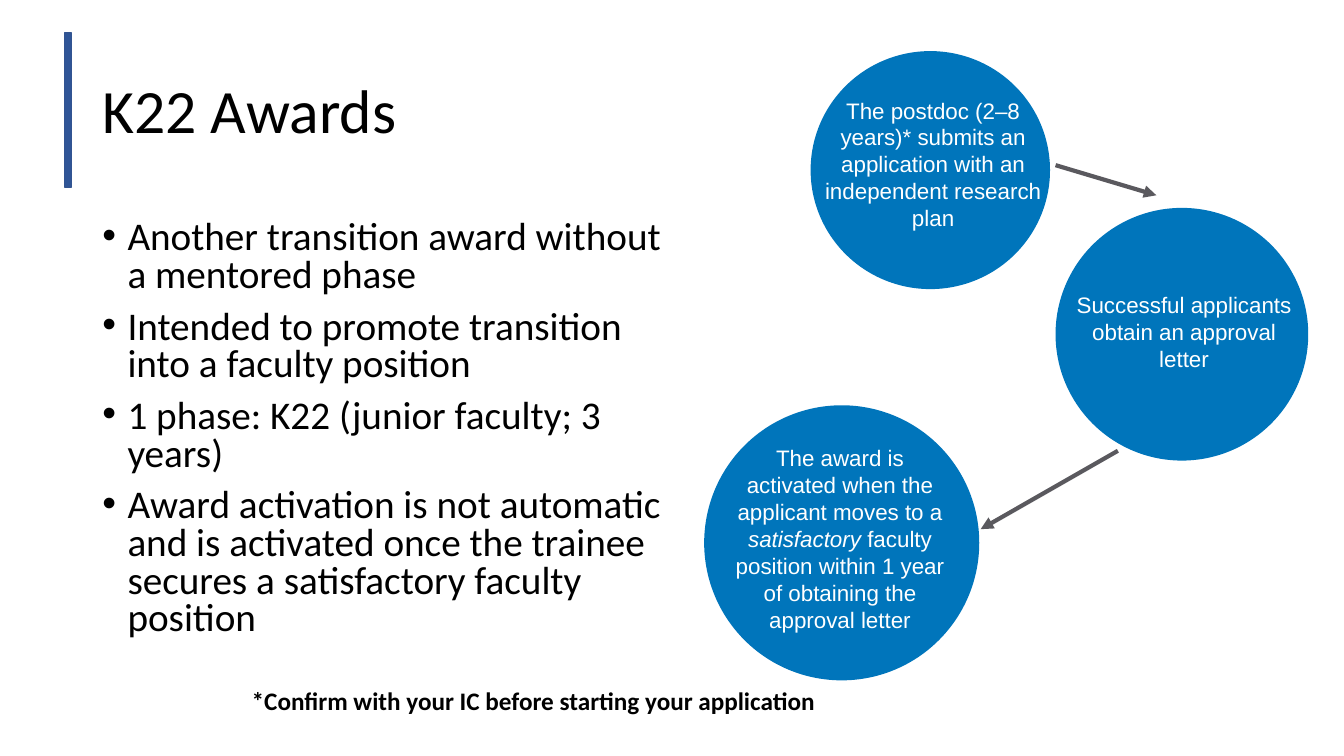
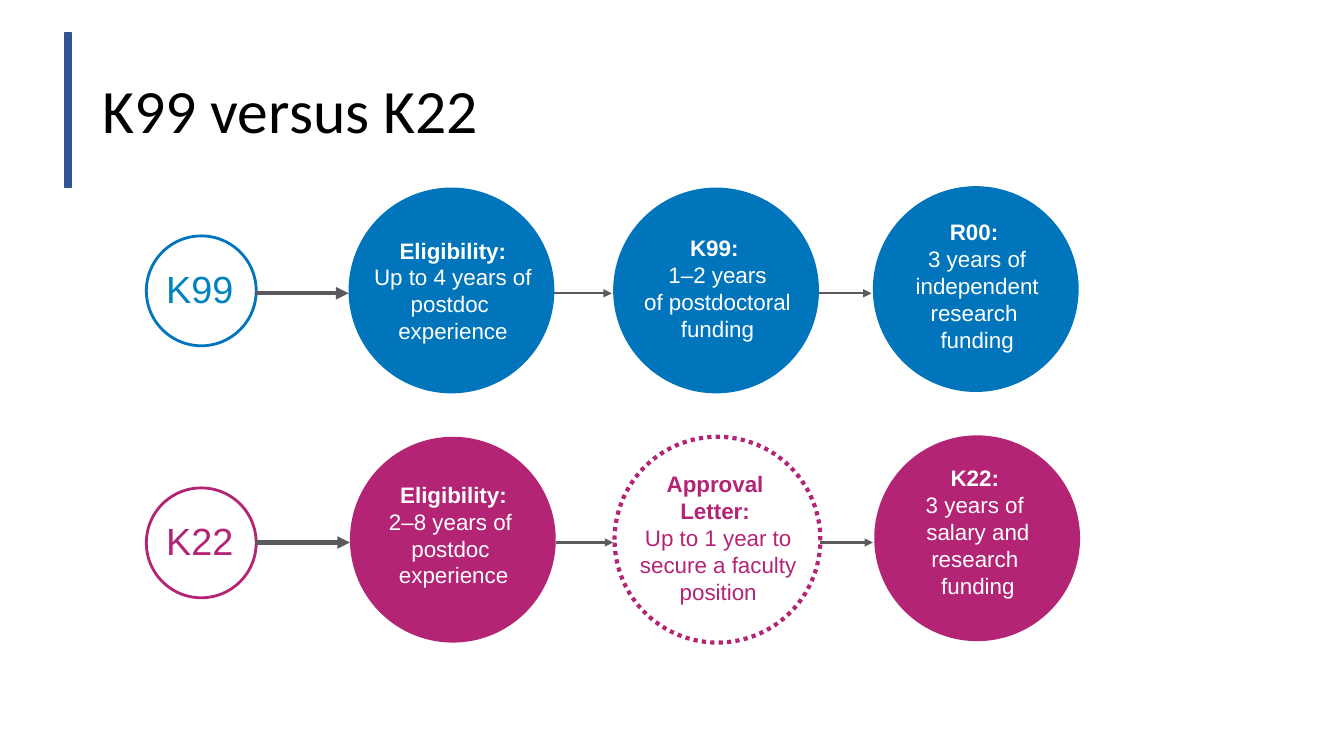
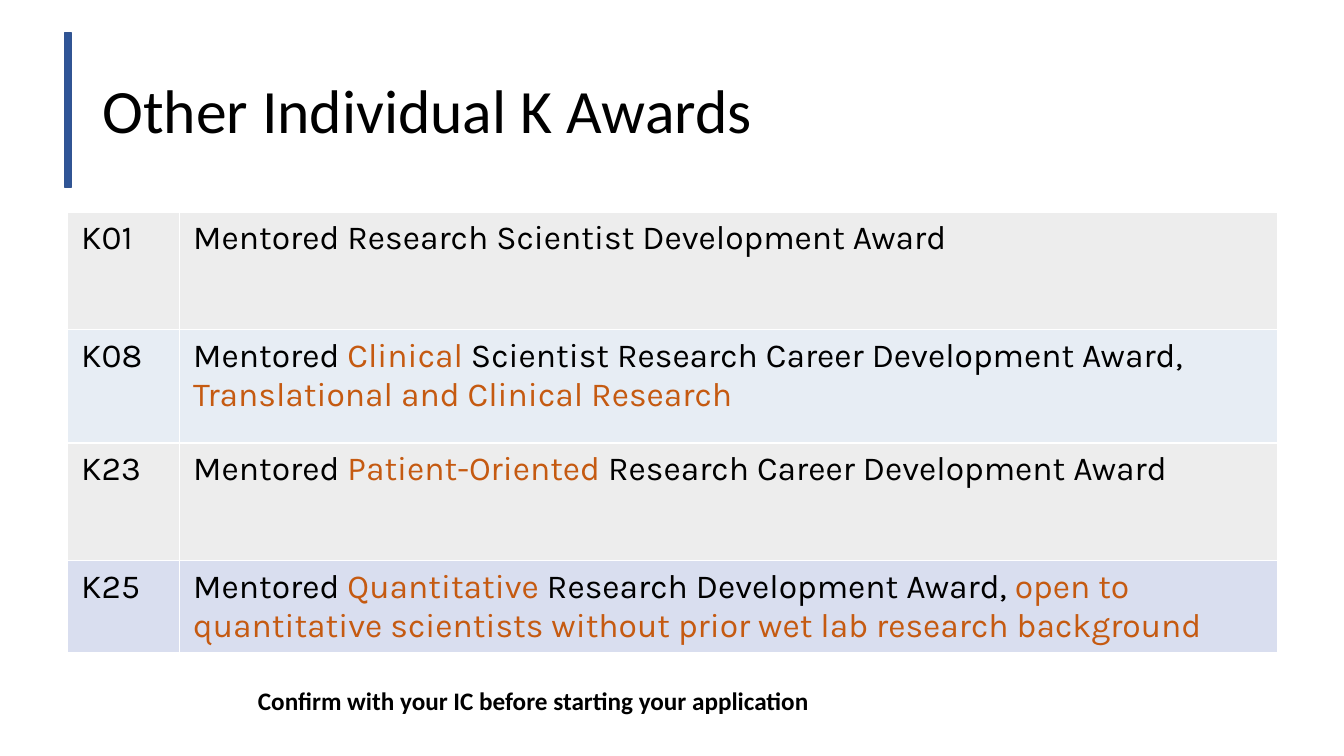
from dataclasses import dataclass
from itertools import pairwise

from lxml import etree
from pptx import Presentation
from pptx.dml.color import RGBColor
from pptx.enum.dml import MSO_LINE
from pptx.enum.shapes import MSO_CONNECTOR, MSO_SHAPE
from pptx.enum.text import MSO_ANCHOR, MSO_AUTO_SIZE, PP_ALIGN
from pptx.oxml.ns import qn
from pptx.util import Pt

LEFT, CENTER = PP_ALIGN.LEFT, PP_ALIGN.CENTER
TOP, MIDDLE = MSO_ANCHOR.TOP, MSO_ANCHOR.MIDDLE
OVAL, RECT = MSO_SHAPE.OVAL, MSO_SHAPE.RECTANGLE
STRAIGHT = MSO_CONNECTOR.STRAIGHT
DOTTED = MSO_LINE.ROUND_DOT
NO_FIT = MSO_AUTO_SIZE.NONE

BLACK = RGBColor(0x00, 0x00, 0x00)
WHITE = RGBColor(0xFF, 0xFF, 0xFF)
BAR_FILL = RGBColor(0x2F, 0x55, 0x97)
BAR_LINE = RGBColor(0x32, 0x54, 0x91)
BLUE = RGBColor(0x00, 0x75, 0xBB)
TAG_BLUE = RGBColor(0x00, 0x83, 0xC1)
MAGENTA = RGBColor(0xB3, 0x24, 0x75)
ARROW_GRAY = RGBColor(0x5A, 0x59, 0x5E)
ORANGE = RGBColor(0xC5, 0x5A, 0x11)
ROW_GRAY = RGBColor(0xED, 0xED, 0xED)
ROW_BLUE = RGBColor(0xE7, 0xED, 0xF4)
ROW_LILAC = RGBColor(0xD9, 0xDE, 0xEF)

TITLE = {"name": "Calibri", "size": Pt(44), "color": BLACK}
BODY = {"name": "Calibri", "size": Pt(28), "color": BLACK}
NOTE = {"name": "Calibri", "size": Pt(18), "color": BLACK, "bold": True}
LABEL = {"name": "Arial", "size": Pt(16), "color": WHITE}
TAG = {"name": "Arial", "size": Pt(27)}
CELL = {"name": "Karla", "size": Pt(24), "color": BLACK}

BOLD = {"bold": True}
ITALIC = {"italic": True}
ACCENT = {"color": ORANGE}


@dataclass(frozen=True)
class Run:
    text: str
    style: dict


@dataclass(frozen=True)
class Box:
    x: float
    y: float
    w: float
    h: float

    def emu(self) -> tuple:
        return Pt(self.x), Pt(self.y), Pt(self.w), Pt(self.h)


@dataclass(frozen=True)
class Bubble:
    circle: Box
    label: Box
    runs: tuple


@dataclass(frozen=True)
class Step:
    circle_y: float
    label_y: float
    heading: str
    detail: str
    dotted: bool = False


@dataclass(frozen=True)
class Track:
    tag: str
    tag_y: float
    arrow_y: float
    dx: float
    color: RGBColor
    tag_color: RGBColor
    steps: tuple


@dataclass(frozen=True)
class Award:
    code: str
    height: float
    fill: RGBColor
    runs: tuple


BULLETS = (
    "Another transition award without a mentored phase",
    "Intended to promote transition into a faculty position",
    "1 phase: K22 (junior faculty; 3 years)",
    "Award activation is not automatic and is activated once the trainee "
    "secures a satisfactory faculty position",
)

BUBBLES = (
    Bubble(Box(503, 289.5, 196.5, 196.5), Box(516, 314, 168, 143), (
        Run("The award is activated when the applicant moves to a ", {}),
        Run("satisfactory", ITALIC),
        Run(" faculty position within 1 year of obtaining the approval letter", {}),
    )),
    Bubble(Box(754, 148.5, 180.5, 180.5), Box(757.5, 204.5, 176.5, 85), (
        Run("Successful applicants obtain an approval letter", {}),
    )),
    Bubble(Box(579, 36.5, 171, 170), Box(580, 65.5, 173, 104), (
        Run("The postdoc (2–8 years)* submits an application with an "
            "independent research plan", {}),
    )),
)

TAG_X, TAG_SIZE = 104.5, 78.5
STEP_XS, STEP_SIZE = (249, 438, 623.5), 147
TRACKS = (
    Track("K99", 168.5, 209.5, 0, BLUE, TAG_BLUE, (
        Step(134, 165.5, "Eligibility:", "Up to 4 years of postdoc \nexperience"),
        Step(134, 164, "K99: ", "1–2 years\nof postdoctoral funding"),
        Step(133, 152.5, "R00: ", "3 years of independent research \nfunding"),
    )),
    Track("K22", 348.5, 387.5, 1, MAGENTA, MAGENTA, (
        Step(312, 340, "Eligibility:", "2–8 years of \npostdoc \nexperience"),
        Step(312, 332.5, "Approval \nLetter: ",
             "Up to 1 year to secure a faculty position", True),
        Step(311, 328, "K22: ", "3 years of \nsalary and research \nfunding"),
    )),
)

AWARDS = (
    Award("K01", 84, ROW_GRAY, (
        Run("Mentored Research Scientist Development Award", {}),
    )),
    Award("K08", 81, ROW_BLUE, (
        Run("Mentored ", {}),
        Run("Clinical", ACCENT),
        Run(" Scientist Research Career Development Award, ", {}),
        Run("Translational and Clinical Research", ACCENT),
    )),
    Award("K23", 84, ROW_GRAY, (
        Run("Mentored ", {}),
        Run("Patient-Oriented", ACCENT),
        Run(" Research Career Development Award", {}),
    )),
    Award("K25", 66, ROW_LILAC, (
        Run("Mentored ", {}),
        Run("Quantitative ", ACCENT),
        Run("Research Development Award,", {}),
        Run(" open to quantitative scientists without prior wet lab "
            "research background", ACCENT),
    )),
)


def write(p, runs: tuple, base: dict, align=LEFT) -> None:
    """Add styled runs to a paragraph; a newline becomes a line break."""
    p.alignment = align
    for run in runs:
        for i, line in enumerate(run.text.split("\n")):
            if i:
                p.add_line_break()
            r = p.add_run()
            r.text = line
            for name, value in {**base, **run.style}.items():
                if name == "color":
                    r.font.color.rgb = value
                else:
                    setattr(r.font, name, value)


def add_text(s, box: Box, paragraphs: tuple, base: dict, align=LEFT) -> list:
    tf = s.shapes.add_textbox(*box.emu()).text_frame
    for name, value in {"word_wrap": True, "auto_size": NO_FIT,
                        "vertical_anchor": TOP}.items():
        setattr(tf, name, value)
    for i, runs in enumerate(paragraphs):
        p = tf.add_paragraph() if i else tf.paragraphs[0]
        write(p, runs, base, align)
    return list(tf.paragraphs)


def add_figure(s, kind, box: Box, fill=None, line=None, width: float = 1, dash=None) -> None:
    sp = s.shapes.add_shape(kind, *box.emu())
    sp.shadow.inherit = False
    if fill is None:
        sp.fill.background()
    else:
        sp.fill.solid()
        sp.fill.fore_color.rgb = fill
    if line is None:
        sp.line.fill.background()
    else:
        sp.line.color.rgb = line
        sp.line.width = Pt(width)
        if dash is not None:
            sp.line.dash_style = dash


def add_arrow(s, x1: float, y1: float, x2: float, y2: float, width: float) -> None:
    c = s.shapes.add_connector(STRAIGHT, Pt(x1), Pt(y1), Pt(x2), Pt(y2))
    c.line.color.rgb = ARROW_GRAY
    c.line.width = Pt(width)
    etree.SubElement(c.line._get_or_add_ln(), qn("a:tailEnd"), type="triangle")
    etree.SubElement(c._element.spPr, qn("a:effectLst"))


def add_bullet(p, first: bool) -> None:
    pPr = p._p.get_or_add_pPr()
    pPr.set("marL", str(Pt(18)))
    pPr.set("indent", str(-Pt(18)))
    etree.SubElement(pPr, qn("a:buFont"), typeface="Arial")
    etree.SubElement(pPr, qn("a:buChar"), char="•")
    p.line_spacing = 0.8
    p.space_before = Pt(0 if first else 10)


def add_note(s, text: str) -> None:
    add_text(s, Box(102, 486, 558, 29), ((Run(text, {}),),), NOTE, CENTER)


def new_slide(prs, title: str):
    """Add a slide with the side bar and the formatted title."""
    s = prs.slides.add_slide(prs.slide_layouts[5])
    add_figure(s, RECT, Box(46, 23.5, 5, 110), BAR_FILL, BAR_LINE)
    sp = s.shapes.title
    sp.left, sp.top, sp.width, sp.height = Box(66, 29, 828, 104).emu()
    tf = sp.text_frame
    tf.auto_size = NO_FIT
    tf.vertical_anchor = MIDDLE
    p = tf.paragraphs[0]
    p.line_spacing = 0.9
    write(p, (Run(title, {}),), TITLE)
    return s


def build_k22(prs) -> None:
    s = new_slide(prs, "K22 Awards")
    bullets = tuple((Run(text, {}),) for text in BULLETS)
    for i, p in enumerate(add_text(s, Box(66, 154, 430, 311), bullets, BODY)):
        add_bullet(p, i == 0)
    for bubble in BUBBLES:
        add_figure(s, OVAL, bubble.circle, BLUE)
        add_text(s, bubble.label, (bubble.runs,), LABEL, CENTER)
    add_arrow(s, 754, 118, 826, 139.5, 3)
    add_arrow(s, 798.5, 322, 700.5, 378, 3)
    add_note(s, "*Confirm with your IC before starting your application")


def add_track(s, track: Track) -> None:
    """Draw one row: the tag, its three steps and the arrows between them."""
    add_figure(s, OVAL, Box(TAG_X, track.tag_y, TAG_SIZE, TAG_SIZE),
               line=track.color, width=2)
    add_text(s, Box(TAG_X - 1, track.tag_y + 18, TAG_SIZE, 40),
             ((Run(track.tag, {"color": track.tag_color}),),), TAG, CENTER)
    xs = [x + track.dx for x in STEP_XS]
    for x, step in zip(xs, track.steps):
        circle = Box(x, step.circle_y, STEP_SIZE, STEP_SIZE)
        if step.dotted:
            add_figure(s, OVAL, circle, WHITE, track.color, 3, DOTTED)
        else:
            add_figure(s, OVAL, circle, track.color)
        style = {"color": track.color if step.dotted else WHITE}
        text = ((Run(step.heading, {**style, **BOLD}),), (Run(step.detail, style),))
        add_text(s, Box(x + 2 - track.dx / 2, step.label_y, 145, 104), text, LABEL, CENTER)
    add_arrow(s, TAG_X + TAG_SIZE - 1, track.arrow_y, xs[0], track.arrow_y, 3)
    for x, following in pairwise(xs):
        add_arrow(s, x + STEP_SIZE, track.arrow_y, following - 1, track.arrow_y, 1.5)


def build_comparison(prs) -> None:
    s = new_slide(prs, "K99 versus K22")
    for track in TRACKS:
        add_track(s, track)


def build_other_awards(prs) -> None:
    s = new_slide(prs, "Other Individual K Awards")
    box = Box(48.5, 151.5, 864, sum(award.height for award in AWARDS))
    table = s.shapes.add_table(len(AWARDS), 2, *box.emu()).table
    table.first_row = table.horz_banding = False
    for column, width in zip(table.columns, (80, 784)):
        column.width = Pt(width)
    margins = {"margin_left": Pt(9.5), "margin_right": Pt(9.5),
               "margin_top": Pt(5), "margin_bottom": Pt(5)}
    for row, award in zip(table.rows, AWARDS):
        row.height = Pt(award.height)
        for cell, runs in zip(row.cells, ((Run(award.code, {}),), award.runs)):
            for name, value in margins.items():
                setattr(cell, name, value)
            cell.fill.solid()
            cell.fill.fore_color.rgb = award.fill
            write(cell.text_frame.paragraphs[0], runs, CELL)
    add_note(s, "Confirm with your IC before starting your application")


def main() -> None:
    prs = Presentation()
    prs.slide_width, prs.slide_height = Pt(960), Pt(540)
    for build in (build_k22, build_comparison, build_other_awards):
        build(prs)
    prs.save("out.pptx")


if __name__ == "__main__":
    main()
